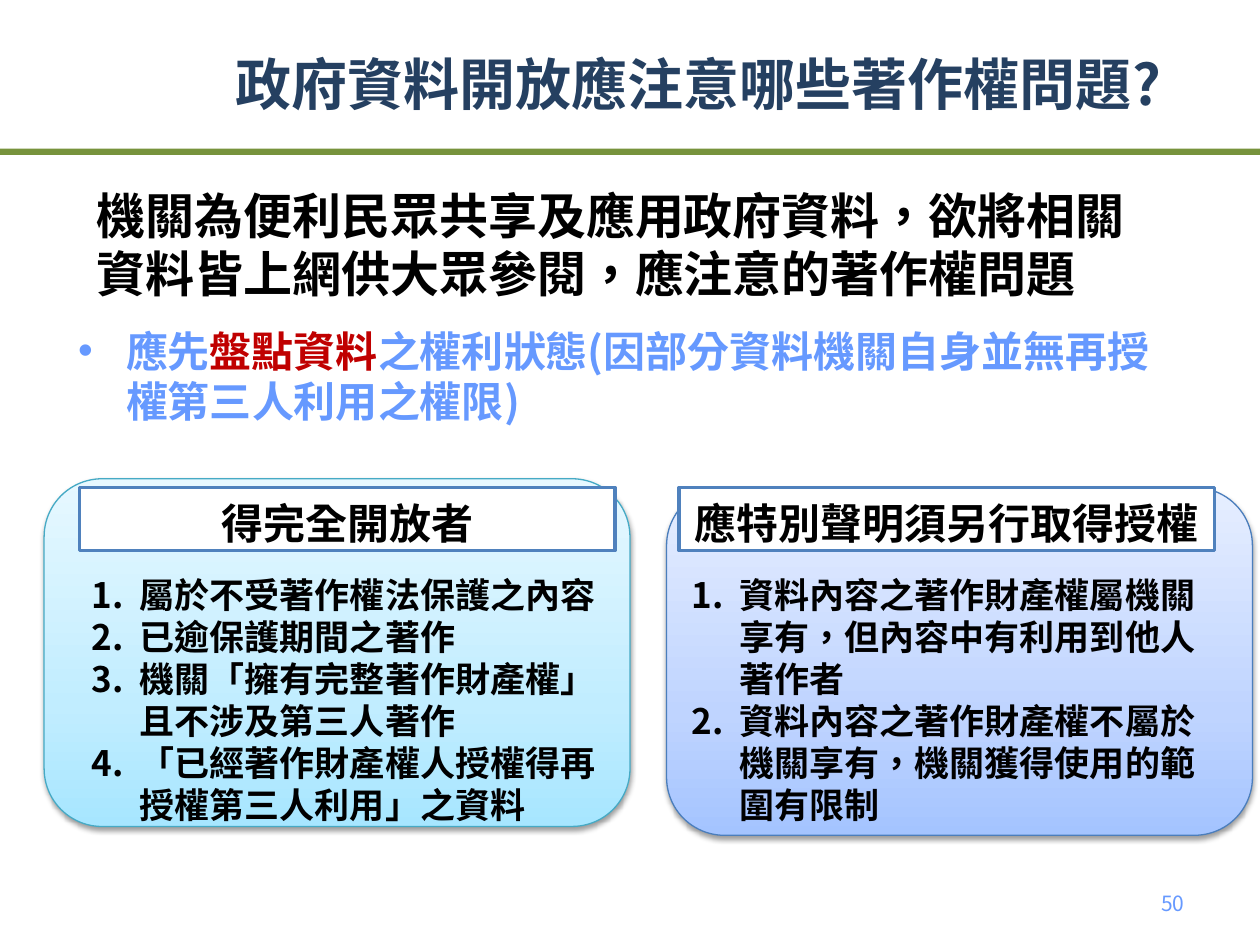
from lxml.etree import SubElement
from pptx import Presentation
from pptx.dml.color import RGBColor
from pptx.enum.shapes import MSO_SHAPE as Shape
from pptx.enum.text import MSO_ANCHOR as Anchor, MSO_AUTO_SIZE as AutoSize, PP_ALIGN as Align
from pptx.oxml import parse_xml
from pptx.oxml.ns import nsdecls, qn
from pptx.util import Inches, Pt

FONT = "Noto Sans CJK SC"
NAVY = RGBColor(0x25, 0x40, 0x61)
GREEN = RGBColor(0x77, 0x93, 0x3C)
BLUE = RGBColor(0x66, 0x99, 0xFF)
RED = RGBColor(0xC0, 0x00, 0x00)
BLACK = RGBColor(0x00, 0x00, 0x00)
WHITE = RGBColor(0xFF, 0xFF, 0xFF)
FRAME = RGBColor(0x4F, 0x81, 0xBD)
CYAN_LINE = RGBColor(0x46, 0xAA, 0xC5)
BLUE_LINE = RGBColor(0x4B, 0x7E, 0xBC)
CYAN_STOPS = ((0, "A7E6FF"), (35, "C1EDFF"), (100, "E7F8FF"))
BLUE_STOPS = ((0, "A4C4FF"), (35, "BFD4FF"), (100, "E6EEFF"))
INDENT = 0.38
LINE_HEIGHT = 1.2


def add_text(paragraph, text, size=20, color=BLACK, bold=True):
    """Add one run with its format, for Latin and East Asian letters alike."""
    run = paragraph.add_run()
    run.text = text
    font = run.font
    font.name, font.size, font.bold = FONT, Pt(size), bold
    font.color.rgb = color
    properties = run._r.get_or_add_rPr()
    properties.set("lang", "zh-TW")
    SubElement(properties, qn("a:ea")).set("typeface", FONT)


def add_bullet(paragraph, numbered=False):
    """Give a paragraph a hanging indent with a dot or a number."""
    properties = paragraph._p.get_or_add_pPr()
    properties.set("marL", str(Inches(INDENT)))
    properties.set("indent", str(-Inches(INDENT)))
    if numbered:
        SubElement(properties, qn("a:buFont")).set("typeface", "+mj-lt")
        SubElement(properties, qn("a:buAutoNum")).set("type", "arabicPeriod")
    else:
        SubElement(properties, qn("a:buFont")).set("typeface", "Arial")
        SubElement(properties, qn("a:buChar")).set("char", "•")


class SlideBuilder:
    def __init__(self, slide):
        self.slide = slide
        self.shapes = slide.shapes

    def place(self, shape, left, top, width, height):
        shape.left, shape.top = Inches(left), Inches(top)
        shape.width, shape.height = Inches(width), Inches(height)

    def frame(self, shape, anchor=Anchor.TOP):
        frame = shape.text_frame
        frame.word_wrap = True
        frame.auto_size = AutoSize.NONE
        frame.vertical_anchor = anchor
        frame.margin_left = frame.margin_right = Inches(0.1)
        frame.margin_top, frame.margin_bottom = Inches(0.08), Inches(0.05)
        return frame

    def spacing(self, paragraph, size, align=Align.LEFT):
        paragraph.alignment = align
        paragraph.line_spacing = Pt(size * LINE_HEIGHT)
        paragraph.space_before = Pt(0)

    def title(self, text, *box):
        shape = self.slide.shapes.title
        self.place(shape, *box)
        frame = self.frame(shape, Anchor.MIDDLE)
        frame.margin_top = Inches(0.05)
        paragraph = frame.paragraphs[0]
        paragraph.alignment = Align.LEFT
        add_text(paragraph, text, size=32, color=NAVY)

    def body(self, parts, *box, size=24):
        shape = self.slide.placeholders[1]
        self.place(shape, *box)
        paragraph = self.frame(shape).paragraphs[0]
        self.spacing(paragraph, size)
        add_bullet(paragraph)
        for text, color in parts:
            add_text(paragraph, text, size=size, color=color)

    def text_box(self, texts, *box, size=20, color=BLACK, bold=True,
                 align=Align.LEFT, anchor=Anchor.TOP, numbered=False):
        shape = self.shapes.add_textbox(*map(Inches, box))
        frame = self.frame(shape, anchor)
        for index, text in enumerate(texts):
            paragraph = frame.add_paragraph() if index else frame.paragraphs[0]
            self.spacing(paragraph, size, align)
            if numbered:
                add_bullet(paragraph, numbered=True)
            add_text(paragraph, text, size=size, color=color, bold=bold)

    def box(self, kind, *box, fill=None, line=None, line_width=0.75):
        shape = self.shapes.add_shape(kind, *map(Inches, box))
        shape.shadow.inherit = False
        if fill is not None:
            shape.fill.solid()
            shape.fill.fore_color.rgb = fill
        if line is None:
            shape.line.fill.background()
        else:
            shape.line.color.rgb = line
            shape.line.width = Pt(line_width)
        return shape

    def heading(self, text, *box, size=24):
        shape = self.box(Shape.RECTANGLE, *box, fill=WHITE, line=FRAME, line_width=2)
        paragraph = self.frame(shape).paragraphs[0]
        self.spacing(paragraph, size, Align.CENTER)
        add_text(paragraph, text, size=size)

    def gradient_box(self, stops, line, *box):
        shape = self.box(Shape.ROUNDED_RECTANGLE, *box, line=line)
        properties = shape._element.spPr
        stop_xml = "".join(
            f'<a:gs pos="{position * 1000}"><a:srgbClr val="{color}"/></a:gs>'
            for position, color in stops)
        properties.find(qn("a:prstGeom")).addnext(parse_xml(
            f'<a:gradFill {nsdecls("a")} rotWithShape="1"><a:gsLst>{stop_xml}</a:gsLst>'
            '<a:lin ang="16200000" scaled="0"/></a:gradFill>'))
        properties.find(qn("a:effectLst")).append(parse_xml(
            f'<a:outerShdw {nsdecls("a")} blurRad="{Pt(3.1)}" dist="{Pt(1.6)}" '
            'dir="5400000" rotWithShape="0"><a:srgbClr val="000000">'
            '<a:alpha val="38000"/></a:srgbClr></a:outerShdw>'))

    def card(self, heading, items, left, top, text_left, stops, line):
        self.shapes = self.slide.shapes.add_group_shape().shapes
        self.gradient_box(stops, line, left, top, 4.65, 2.76)
        self.text_box(items, text_left, 4.47, 4.25, 2.12, numbered=True)
        self.heading(heading, text_left, 3.87, 4.25, 0.5)
        self.shapes = self.slide.shapes


def main():
    presentation = Presentation()
    presentation.slide_width, presentation.slide_height = Inches(10), Inches(7.5)
    builder = SlideBuilder(presentation.slides.add_slide(presentation.slide_layouts[1]))

    # Title and green rule
    builder.box(Shape.RECTANGLE, 0, 1.18, 10, 0.05, fill=GREEN)
    builder.title("政府資料開放應注意哪些著作權問題?", 1.77, 0.36, 8.02, 0.6)

    # Question and first answer
    builder.text_box(
        ["機關為便利民眾共享及應用政府資料，欲將相關資料皆上網供大眾參閱，應注意的著作權問題"],
        0.67, 1.39, 8.66, 1.04, size=28)
    builder.body(
        [("應先", BLUE), ("盤點資料", RED),
         ("之權利狀態(因部分資料機關自身並無再授權第三人利用之權限)", BLUE)],
        0.52, 2.5, 9, 4.23)

    # Two cards
    builder.card(
        "得完全開放者",
        ["屬於不受著作權法保護之內容",
         "已逾保護期間之著作",
         "機關「擁有完整著作財產權」且不涉及第三人著作",
         "「已經著作財產權人授權得再授權第三人利用」之資料"],
        0.35, 3.8, 0.63, CYAN_STOPS, CYAN_LINE)
    builder.card(
        "應特別聲明須另行取得授權",
        ["資料內容之著作財產權屬機關享有，但內容中有利用到他人著作者",
         "資料內容之著作財產權不屬於機關享有，機關獲得使用的範圍有限制"],
        5.29, 3.87, 5.39, BLUE_STOPS, BLUE_LINE)

    # Page number
    builder.text_box(["50"], 7.17, 6.95, 2.33, 0.4, size=12, color=BLUE, bold=False,
                     align=Align.RIGHT, anchor=Anchor.MIDDLE)

    presentation.save("out.pptx")


if __name__ == "__main__":
    main()
